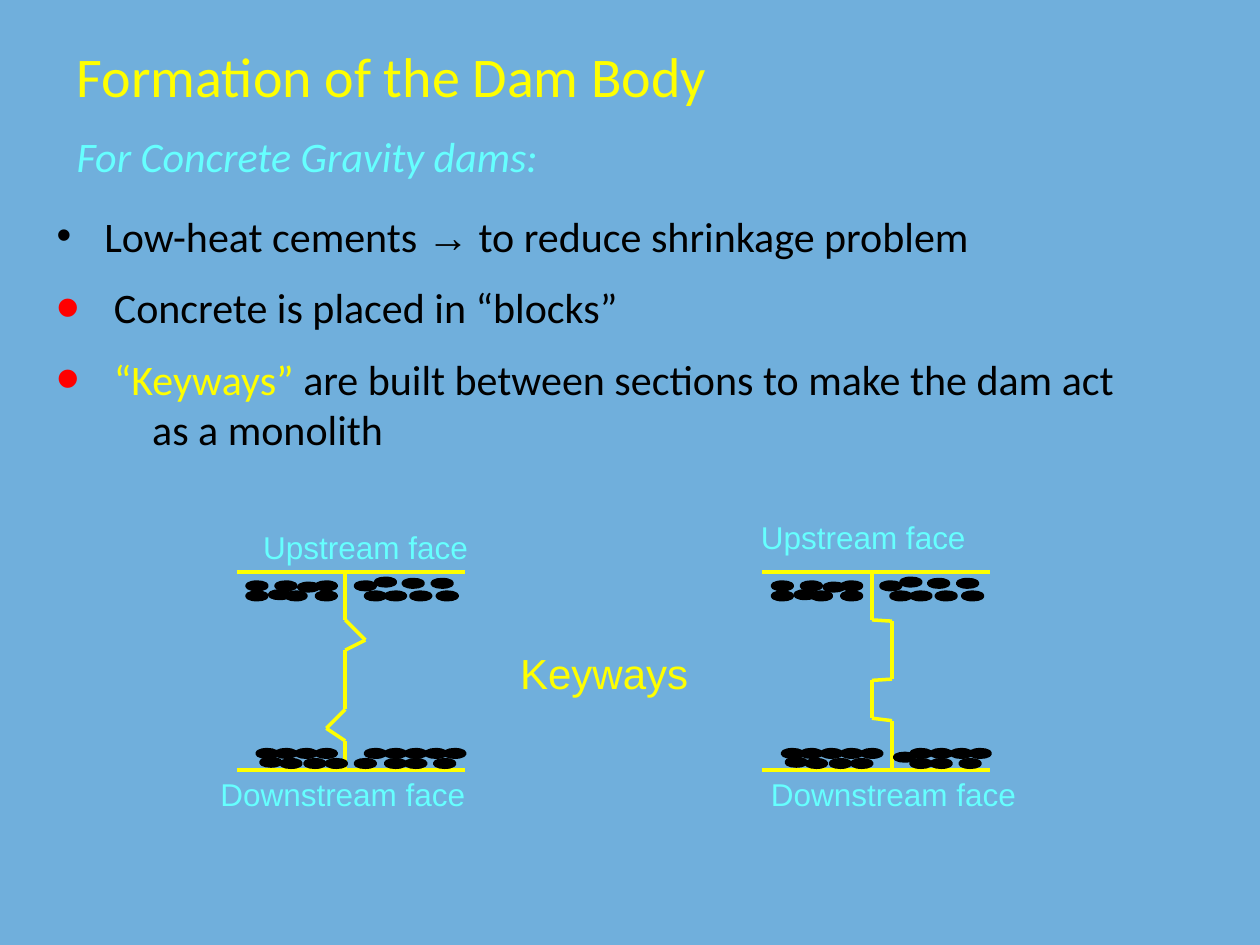
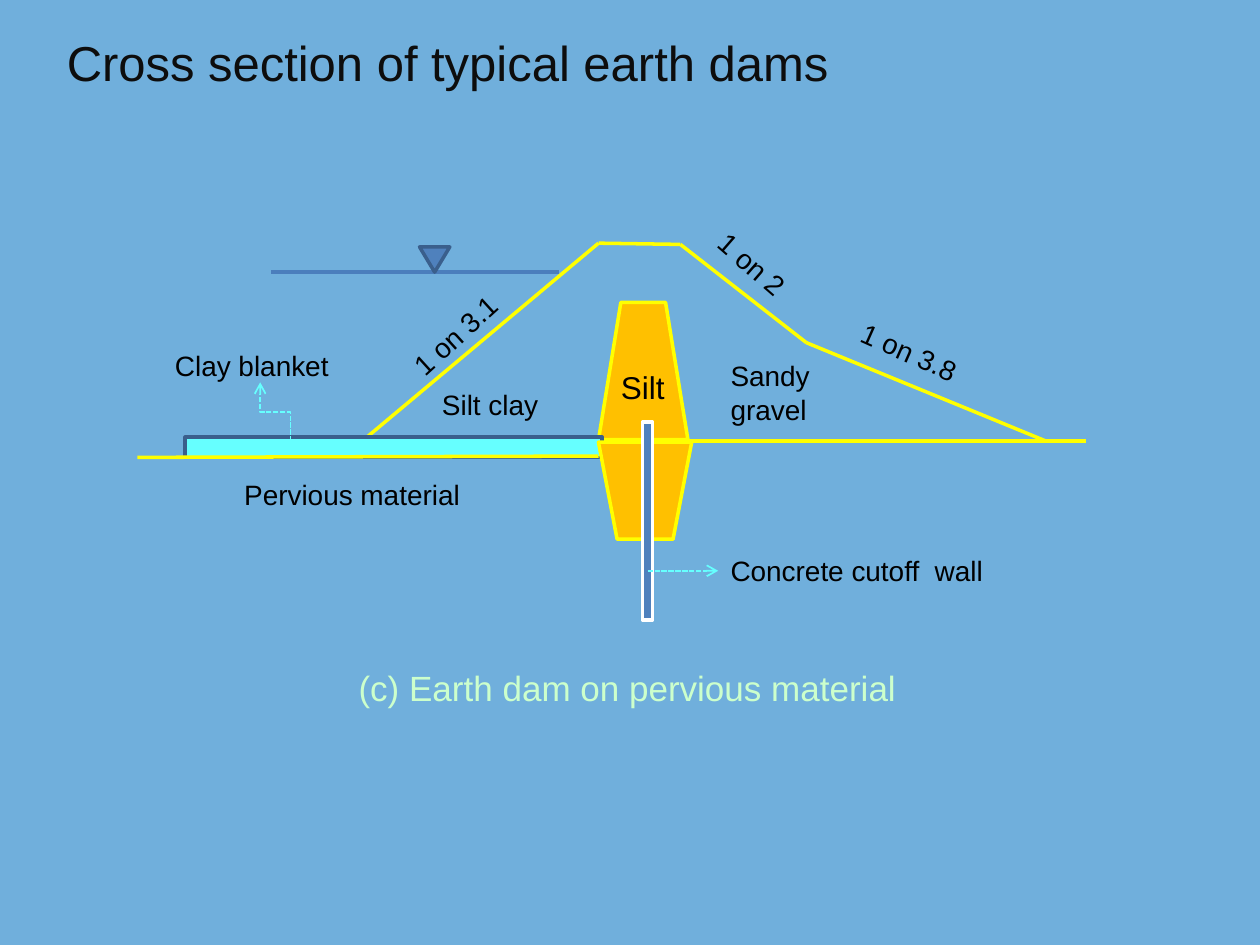
from itertools import pairwise
from lxml import etree
from pptx import Presentation
from pptx.dml.color import RGBColor
from pptx.enum.dml import MSO_LINE
from pptx.enum.shapes import MSO_CONNECTOR, MSO_SHAPE
from pptx.enum.text import MSO_ANCHOR, MSO_AUTO_SIZE, PP_ALIGN
from pptx.oxml.ns import qn
from pptx.util import Inches, Pt

LINE, ELBOW = MSO_CONNECTOR.STRAIGHT, MSO_CONNECTOR.ELBOW
OVAL, RECT, TRAP = MSO_SHAPE.OVAL, MSO_SHAPE.RECTANGLE, MSO_SHAPE.TRAPEZOID
MERGE, FUNNEL = MSO_SHAPE.FLOWCHART_MERGE, MSO_SHAPE.FLOWCHART_MANUAL_OPERATION
LEFT, CENTER, TOP = PP_ALIGN.LEFT, PP_ALIGN.CENTER, MSO_ANCHOR.TOP
DASH, FIXED = MSO_LINE.SQUARE_DOT, MSO_AUTO_SIZE.NONE


class Theme:
    sky, yellow, cyan, mint = "70AFDC", "FFFF00", "66FFFF", "CCFFCC"
    black, ink, white, red = "000000", "0D0D0D", "FFFFFF", "FF0000"
    amber, blue, navy, water = "FFC000", "4F81BD", "3A5F8C", "4B7EBC"
    body, plain, symbol = "Calibri", "Arial", "Times New Roman"
    head, title, lead, note, label, small = 32, 28, 24, 20, 18, 16
    thick, thin = 2, 1


T = Theme

BODY_TITLE = "Formation of the Dam Body"
BODY_LEAD = "For Concrete Gravity dams:"
POINTS = [
    (T.black, 100, [("Low-heat cements ", T.body, T.black), ("→", T.symbol, T.black),
                    (" to reduce shrinkage problem", T.body, T.black)]),
    (T.red, 160, [(" Concrete is placed in “blocks”", T.body, T.black)]),
    (T.red, 160, [(" ", T.body, T.black), ("“Keyways” ", T.body, T.yellow),
                  ("are built between sections to make the dam act", T.body, T.black)]),
    (None, 0, [("as a monolith", T.body, T.black)]),
]
FACES = (4.54, 6.11)
STONES = {
    4.59: [1.10],
    4.60: [1.32, 1.55],
    4.62: [0.08, 0.31, 0.63, 0.94],
    4.63: [0.49],
    4.69: [0.26],
    4.70: [0.08, 0.39, 0.63, 1.02, 1.18, 1.38, 1.59],
    5.95: [0.16, 0.31, 0.47, 0.63, 1.18, 1.34, 1.50, 1.65],
    6.02: [0.19],
    6.03: [0.35, 0.54, 0.71, 1.18, 1.34, 1.57],
}
JOINTS = [
    (1.88,
     [(0.86, 4.54), (0.86, 4.92), (1.02, 5.08), (0.86, 5.16),
      (0.86, 5.63), (0.71, 5.78), (0.86, 5.88), (0.86, 6.11)],
     [(0.94, 6.03), (1.02, 5.95)]),
    (6.05,
     [(0.87, 4.54), (0.87, 4.92), (1.03, 4.93), (1.03, 5.39),
      (0.87, 5.40), (0.87, 5.70), (1.03, 5.72), (1.03, 6.11)],
     [(0.79, 5.95), (1.05, 5.98)]),
]
FACE_TAGS = [
    ("Upstream face", (1.99, 4.14, 1.97, 0.4)),
    ("Upstream face", (5.94, 4.06, 1.97, 0.4)),
    ("Downstream face", (1.65, 6.1, 2.28, 0.4)),
    ("Downstream face", (6.02, 6.1, 2.28, 0.4)),
]

EARTH_TITLE = "Cross section of typical earth dams"
SHELL = [(2.78, 3.58), (4.75, 1.93), (5.4, 1.94), (6.4, 2.72), (8.3, 3.5)]
BASE = [(5.47, 3.5), (8.62, 3.5)]
GROUND = [(1.09, 3.63), (4.75, 3.62)]
POOL = [(4.44, 2.16), (2.15, 2.16)]
BLOCKS = [
    (TRAP, (4.75, 2.4, 0.71, 1.09), T.amber, T.yellow),
    (MERGE, (3.33, 1.96, 0.24, 0.2), T.blue, T.navy),
    (RECT, (1.47, 3.47, 3.31, 0.16), T.cyan, T.navy),
    (FUNNEL, (4.75, 3.51, 0.74, 0.77), T.amber, T.yellow),
    (RECT, (5.1, 3.35, 0.08, 1.57), T.blue, T.white),
]
ZONES = [
    ("Silt clay", (3.41, 3.03, 1.1, 0.37), 0),
    ("1 on 3.1", (3.07, 2.36, 1.34, 0.37), 317.7),
    ("1 on 2", (5.54, 1.97, 0.99, 0.37), 41),
    ("1 on 3.8", (6.71, 2.64, 1.15, 0.37), 23.9),
    ("Sandy\ngravel", (5.7, 2.8, 0.87, 0.64), 0),
    ("Clay blanket", (1.29, 2.72, 1.58, 0.37), 0),
    ("Pervious material", (1.84, 3.74, 2.44, 0.37), 0),
]
WALL_TAG = ("Concrete cutoff  wall", (5.7, 4.34, 2.44, 0.38))
CAPTION = "(c) Earth dam on pervious material"


def rgb(tone):
    return RGBColor.from_string(tone)


def style(run, size, tone, face=T.plain, slant=False):
    font = run.font
    font.size, font.name, font.italic = Pt(size), face, slant
    font.color.rgb = rgb(tone)


def fill_text(frame, text, size, tone, face=T.plain, align=LEFT, slant=False):
    frame.text = text
    for para in frame.paragraphs:
        para.alignment = align
        for run in para.runs:
            style(run, size, tone, face, slant)


def add_text(slide, text, box, size, tone, turn=0, **look):
    shape = slide.shapes.add_textbox(*map(Inches, box))
    shape.rotation = turn
    shape.text_frame.word_wrap = True
    fill_text(shape.text_frame, text, size, tone, **look)
    return shape


def add_block(slide, kind, box, fill, edge):
    shape = slide.shapes.add_shape(kind, *map(Inches, box))
    shape.shadow.inherit = False
    shape.fill.solid()
    shape.fill.fore_color.rgb = rgb(fill)
    shape.line.color.rgb = rgb(edge)
    shape.line.width = Pt(T.thick)


def add_line(slide, start, end, tone=T.yellow, width=T.thick, kind=LINE):
    line = slide.shapes.add_connector(kind, *map(Inches, start + end))
    line.line.color.rgb = rgb(tone)
    line.line.width = Pt(width)
    etree.SubElement(line._element.spPr, qn("a:effectLst"))
    return line


def add_chain(slide, points, tone=T.yellow):
    for start, end in pairwise(points):
        add_line(slide, start, end, tone)


def add_arrow(slide, start, end, kind=LINE):
    line = add_line(slide, start, end, T.cyan, T.thin, kind)
    line.line.dash_style = DASH
    etree.SubElement(line.line._get_or_add_ln(), qn("a:tailEnd"), type="arrow")
    return line


def add_slide(deck, text, box, size, tone, face):
    slide = deck.slides.add_slide(deck.slide_layouts[5])
    title = slide.shapes.title
    title.left, title.top, title.width, title.height = map(Inches, box)
    frame = title.text_frame
    frame.auto_size, frame.word_wrap = FIXED, False
    frame.vertical_anchor = TOP
    fill_text(frame, text, size, tone, face)
    return slide


def set_bullet(para, tone, scale):
    props = para._p.get_or_add_pPr()
    if tone is None:
        props.set("marL", str(Inches(0.76)))
        return
    props.set("marL", str(Inches(0.38)))
    props.set("indent", str(Inches(-0.38)))
    color = etree.SubElement(props, qn("a:buClr"))
    etree.SubElement(color, qn("a:srgbClr"), val=tone)
    etree.SubElement(props, qn("a:buSzPct"), val=str(scale * 1000))
    etree.SubElement(props, qn("a:buFont"), typeface=T.plain)
    etree.SubElement(props, qn("a:buChar"), char="•")


def add_points(slide):
    box = slide.shapes.add_textbox(*map(Inches, (0.35, 1.62, 9.49, 2.46)))
    frame = box.text_frame
    frame.word_wrap = True
    for i, (tone, scale, parts) in enumerate(POINTS):
        para = frame.add_paragraph() if i else frame.paragraphs[0]
        para.space_before = Pt(12 if i and tone else 0)
        set_bullet(para, tone, scale)
        for text, face, ink in parts:
            run = para.add_run()
            run.text = text
            style(run, T.lead, ink, face)


def add_joint(slide, left, path_pts, extra):
    for y in FACES:
        add_line(slide, (left, y), (left + 1.81, y))
    add_chain(slide, [(left + x, y) for x, y in path_pts])
    stones = [(x, y) for y, row in STONES.items() for x in row]
    for x, y in stones + extra:
        add_block(slide, OVAL, (left + x, y, 0.16, 0.06), T.black, T.black)


def draw_body(deck):
    slide = add_slide(deck, BODY_TITLE, (0.51, 0.28, 5.68, 0.64), T.head, T.yellow, T.body)
    add_text(slide, BODY_LEAD, (0.51, 0.99, 4.34, 0.51), T.lead, T.cyan,
             face=T.body, slant=True)
    add_points(slide)
    for joint in JOINTS:
        add_joint(slide, *joint)
    for text, box in FACE_TAGS:
        add_text(slide, text, box, T.label, T.cyan)
    add_text(slide, "Keyways", (4.01, 5.09, 1.57, 0.51), T.lead, T.yellow, align=CENTER)


def draw_earth(deck):
    slide = add_slide(deck, EARTH_TITLE, (0.43, 0.21, 6.31, 0.57), T.title, T.ink, T.plain)
    add_chain(slide, BASE)
    add_chain(slide, SHELL)
    add_chain(slide, POOL, T.water)
    for block in BLOCKS:
        add_block(slide, *block)
    add_chain(slide, GROUND)
    add_text(slide, "Silt", (4.83, 2.87, 0.63, 0.4), T.label, T.black)
    for text, box, turn in ZONES:
        add_text(slide, text, box, T.small, T.black, turn)
    bent = add_arrow(slide, (1.95, 3.39), (2.42, 3.15), ELBOW)
    bent._element.spPr.find(qn("a:xfrm")).set("rot", str(270 * 60000))
    tag = add_text(slide, *WALL_TAG, T.small, T.black)
    add_arrow(slide, (5.14, 4.53), (5.7, 4.53)).end_connect(tag, 1)
    add_text(slide, CAPTION, (1.99, 5.24, 5.98, 0.44), T.note, T.mint, align=CENTER)


def main():
    deck = Presentation()
    deck.slide_width, deck.slide_height = Inches(10), Inches(7.5)
    back = deck.slide_master.background.fill
    back.solid()
    back.fore_color.rgb = rgb(T.sky)
    draw_body(deck)
    draw_earth(deck)
    deck.save("out.pptx")


if __name__ == "__main__":
    main()
